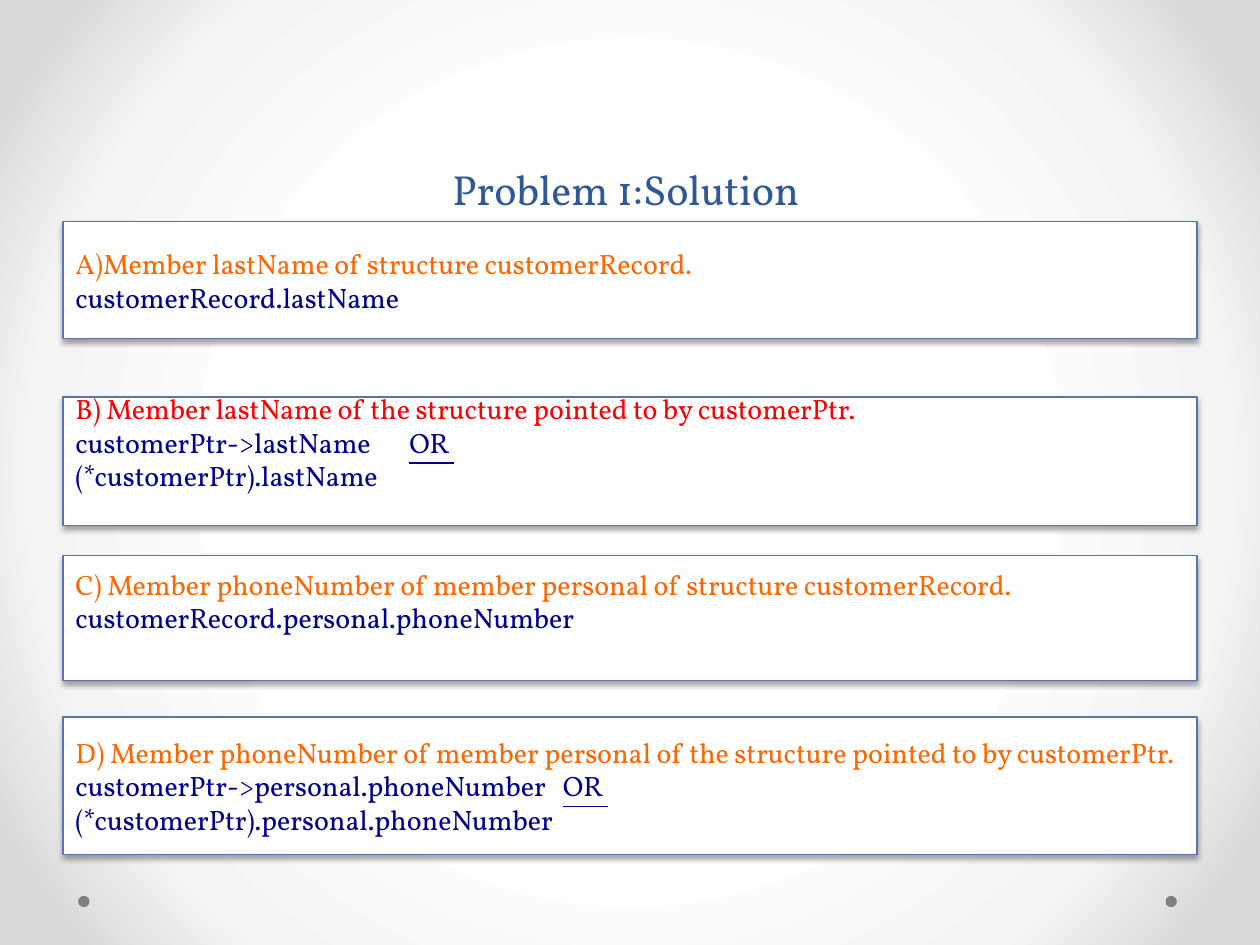
from dataclasses import dataclass

import lxml.etree
import pptx
import pptx.dml.color
import pptx.enum.shapes
import pptx.enum.text
import pptx.oxml
import pptx.oxml.ns
import pptx.util

Inches = pptx.util.Inches
Pt = pptx.util.Pt
RGB = pptx.dml.color.RGBColor.from_string
NS = pptx.oxml.ns.nsdecls("a")


@dataclass(frozen=True)
class Theme:
    font: str = "Vollkorn"
    title_size: int = 24
    body_size: int = 16
    title: str = "2F5897"
    question: str = "FF6600"
    alert: str = "FF0000"
    answer: str = "000090"
    panel: str = "FFFFFF"
    border: str = "5C72B2"
    dot: str = "808080"
    backdrop: tuple = ((50, "FFFFFF"), (76, "F4F4F4"), (92, "DADADA"))


@dataclass(frozen=True)
class Solution:
    top: float
    height: float
    question: str
    answer: str
    alternative: str = ""
    or_position: float = 0
    bottom_inset: float = 0.05
    question_color: str = Theme.question


THEME = Theme()
SOLUTIONS = (
    Solution(1.76, 0.93, "A)Member lastName of structure customerRecord.",
             "customerRecord.lastName"),
    Solution(3.15, 1.02, "B) Member lastName of the structure pointed to by customerPtr.",
             "customerPtr->lastName", "(*customerPtr).lastName",
             or_position=2.65, bottom_inset=0.35, question_color=THEME.alert),
    Solution(4.41, 0.99, "C) Member phoneNumber of member personal of structure customerRecord.",
             "customerRecord.personal.phoneNumber", bottom_inset=0.32),
    Solution(5.69, 1.09,
             "D) Member phoneNumber of member personal of the structure pointed to by customerPtr.",
             "customerPtr->personal.phoneNumber", "(*customerPtr).personal.phoneNumber",
             or_position=3.87),
)


def add_run(paragraph, text: str, color: str, size: int = THEME.body_size,
            underline: bool = False) -> None:
    run = paragraph.add_run()
    run.text = text
    run.font.name = THEME.font
    run.font.size = Pt(size)
    run.font.color.rgb = RGB(color)
    if underline:
        run.font.underline = True


def paint_background(slide) -> None:
    slide.background.fill.gradient()
    gradient = slide.element.xpath(".//p:bgPr/a:gradFill")[0]
    stops = "".join(f'<a:gs pos="{position * 1000}"><a:srgbClr val="{color}"/></a:gs>'
                    for position, color in THEME.backdrop)
    radial = pptx.oxml.parse_xml(
        f'<a:gradFill {NS} rotWithShape="1"><a:gsLst>{stops}</a:gsLst><a:path path="circle">'
        '<a:fillToRect l="50000" t="50000" r="50000" b="50000"/></a:path></a:gradFill>')
    gradient.getparent().replace(gradient, radial)


def add_dot(slide, left: float) -> None:
    dot = slide.shapes.add_shape(pptx.enum.shapes.MSO_SHAPE.OVAL, Inches(left), Inches(7.11),
                                 Inches(0.09), Inches(0.09))
    dot.shadow.inherit = False
    dot.fill.solid()
    dot.fill.fore_color.rgb = RGB(THEME.dot)
    dot.line.fill.background()


def add_title(slide, text: str) -> None:
    title = slide.shapes.title
    title.left, title.top, title.width, title.height = map(Inches, (0.5, 0, 9, 1.75))
    title.text_frame.vertical_anchor = pptx.enum.text.MSO_ANCHOR.BOTTOM
    heading = title.text_frame.paragraphs[0]
    heading.alignment = pptx.enum.text.PP_ALIGN.CENTER
    heading.line_spacing = Pt(58)
    add_run(heading, text, THEME.title, THEME.title_size)


def add_panel(slide, solution: Solution):
    panel = slide.shapes.add_shape(pptx.enum.shapes.MSO_SHAPE.RECTANGLE, Inches(0.5),
                                   Inches(solution.top), Inches(9), Inches(solution.height))
    panel.fill.solid()
    panel.fill.fore_color.rgb = RGB(THEME.panel)
    panel.line.color.rgb = RGB(THEME.border)
    panel.line.width = Pt(0.75)
    panel.shadow.inherit = False
    effects = panel.element.spPr.find(pptx.oxml.ns.qn("a:effectLst"))
    effects.append(pptx.oxml.parse_xml(
        f'<a:outerShdw {NS} blurRad="{Pt(3.1)}" dist="{Pt(1.8)}" dir="5400000" rotWithShape="0">'
        '<a:srgbClr val="000000"><a:alpha val="35000"/></a:srgbClr></a:outerShdw>'))
    return panel


def add_tab_stop(paragraph, position: float) -> None:
    properties = paragraph._p.get_or_add_pPr()
    tabs = lxml.etree.SubElement(properties, pptx.oxml.ns.qn("a:tabLst"))
    lxml.etree.SubElement(tabs, pptx.oxml.ns.qn("a:tab"), pos=str(Inches(position)), algn="l")


def add_solution(slide, solution: Solution) -> None:
    frame = add_panel(slide, solution).text_frame
    frame.word_wrap = True
    frame.vertical_anchor = pptx.enum.text.MSO_ANCHOR.MIDDLE
    frame.margin_bottom = Inches(solution.bottom_inset)
    question, answer = frame.paragraphs[0], frame.add_paragraph()
    add_run(question, solution.question, solution.question_color)
    add_run(answer, solution.answer, THEME.answer)
    if solution.alternative:
        add_tab_stop(answer, solution.or_position)
        add_run(answer, "\t", THEME.answer)
        add_run(answer, "OR ", THEME.answer, underline=True)
        add_run(frame.add_paragraph(), solution.alternative, THEME.answer)
    for paragraph in frame.paragraphs:
        paragraph.alignment = pptx.enum.text.PP_ALIGN.LEFT


def main() -> None:
    """Build the slide with the four solutions of problem 1."""
    deck = pptx.Presentation()
    deck.slide_width, deck.slide_height = Inches(10), Inches(7.5)
    slide = deck.slides.add_slide(deck.slide_layouts[5])
    paint_background(slide)
    for left in (9.25, 0.62):
        add_dot(slide, left)
    add_title(slide, "Problem 1:Solution ")
    for solution in SOLUTIONS:
        add_solution(slide, solution)
    deck.save("out.pptx")


if __name__ == "__main__":
    main()
